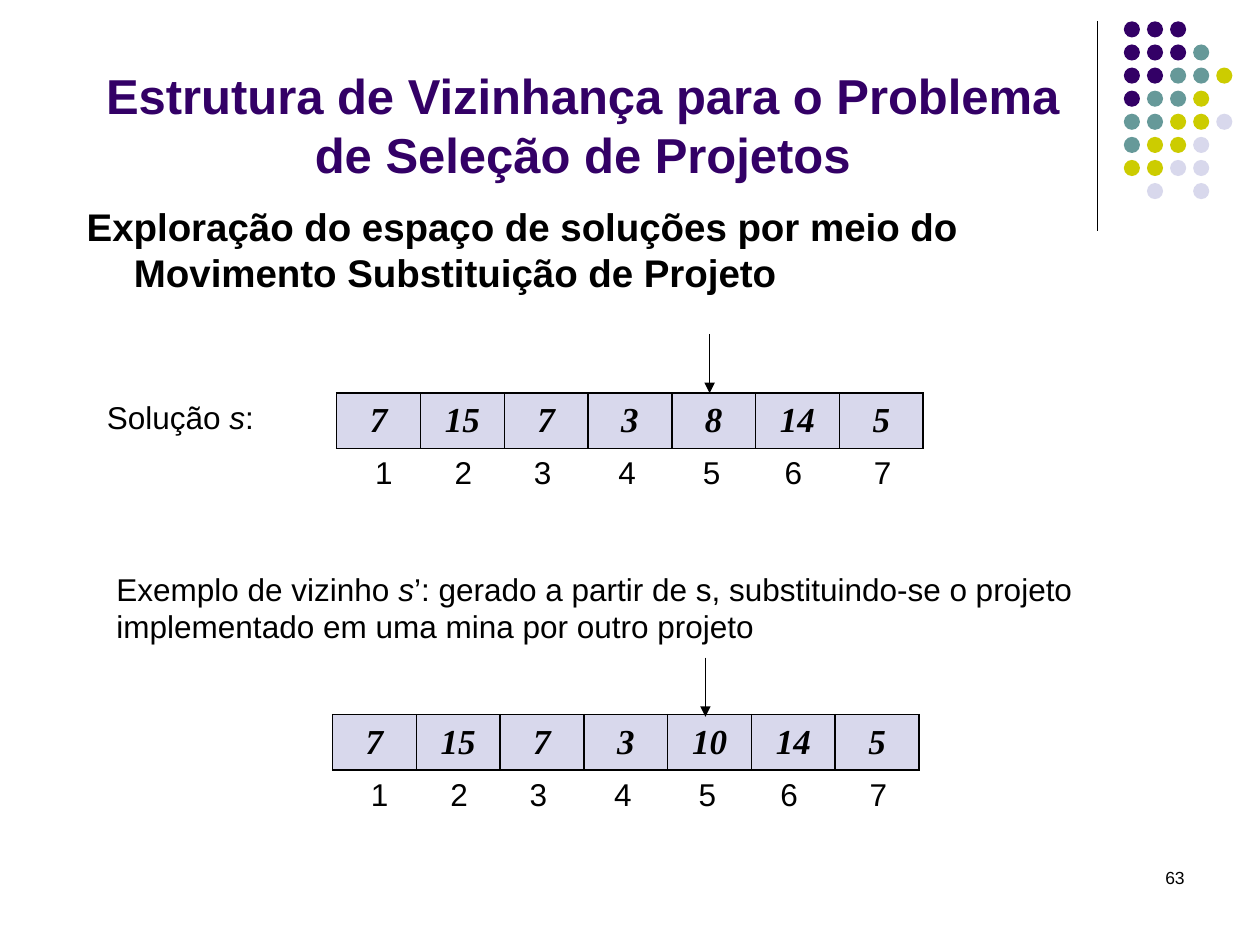
from lxml.etree import SubElement
from pptx import Presentation
from pptx.dml.color import RGBColor
from pptx.enum.shapes import MSO_CONNECTOR, MSO_SHAPE
from pptx.enum.text import MSO_ANCHOR, PP_ALIGN
from pptx.oxml.ns import qn
from pptx.util import Pt

COLORS = {"ink": "000000", "purple": "330066", "teal": "669999",
          "olive": "CCCC00", "lilac": "D8D8EC"}
DOT_COLORS = {"P": "purple", "T": "teal", "O": "olive", "L": "lilac"}
DOT_ROWS = ["PPP", "PPPT", "PPTTO", "PTTO", "TTOOL", "TOOL", "OOLL", " L L"]
INDEX_CENTERS = [27, 72.4, 117.7, 166, 214.2, 261, 312]


def rgb(name):
    return RGBColor.from_string(COLORS[name])


def add_run(p, text, size, color="ink", font="Arial", bold=False, italic=False):
    r = p.add_run()
    r.text = text
    r.font.name, r.font.size = font, Pt(size)
    r.font.bold, r.font.italic = bold, italic
    r.font.color.rgb = rgb(color)


def add_text(s, box, runs, size, align=PP_ALIGN.LEFT, bold=False):
    """Add a text box; runs are (text, italic) pairs."""
    tf = s.shapes.add_textbox(*map(Pt, box)).text_frame
    tf.word_wrap = True
    p = tf.paragraphs[0]
    p.alignment = align
    for text, italic in runs:
        add_run(p, text, size, bold=bold, italic=italic)
    return p


def add_line(s, x1, y1, x2, y2, arrow=False):
    line = s.shapes.add_connector(MSO_CONNECTOR.STRAIGHT, *map(Pt, (x1, y1, x2, y2)))
    line.line.color.rgb = rgb("ink")
    line.line.width = Pt(0.75)
    if arrow:
        SubElement(line.line._get_or_add_ln(), qn("a:tailEnd"), type="triangle")
    SubElement(line._element.spPr, qn("a:effectLst"))


def add_corner_dots(s, left, top, pitch=13.2, size=9.2):
    for row, codes in enumerate(DOT_ROWS):
        for col, code in enumerate(codes):
            if code == " ":
                continue
            sp = s.shapes.add_shape(MSO_SHAPE.OVAL, Pt(left + col * pitch),
                                    Pt(top + row * pitch), Pt(size), Pt(size))
            sp.shadow.inherit = False
            sp.fill.solid()
            sp.fill.fore_color.rgb = rgb(DOT_COLORS[code])
            sp.line.fill.background()


def add_title(s, box, text):
    title = s.shapes.title
    title.left, title.top, title.width, title.height = map(Pt, box)
    tf = title.text_frame
    tf.word_wrap = True
    tf.vertical_anchor = MSO_ANCHOR.TOP
    tf.margin_top = Pt(6)
    p = tf.paragraphs[0]
    p.alignment = PP_ALIGN.CENTER
    add_run(p, text, 28, "purple", bold=True)


def add_heading(s, box, text):
    p = add_text(s, box, [(text, False)], 22, bold=True)
    pPr = p._p.get_or_add_pPr()
    pPr.set("marL", str(Pt(27)))
    pPr.set("indent", str(-Pt(27)))


def set_borders(cell):
    tcPr = cell._tc.get_or_add_tcPr()
    for pos, side in enumerate(("lnL", "lnR", "lnT", "lnB")):
        ln = SubElement(tcPr, qn(f"a:{side}"), w=str(Pt(1)))
        fill = SubElement(ln, qn("a:solidFill"))
        SubElement(fill, qn("a:srgbClr"), val=COLORS["ink"])
        tcPr.insert(pos, ln)


def add_solution(s, box, projects, arrow_top):
    """Add the row of projects, the mine numbers below and the arrow to mine 5."""
    left, top, width, height = box
    table = s.shapes.add_table(1, len(projects), *map(Pt, box)).table
    table.first_row = table.horz_banding = False
    for col, project in zip(table.columns, projects):
        col.width = Pt(width / len(projects))
    for cell, project in zip(table.rows[0].cells, projects):
        cell.fill.solid()
        cell.fill.fore_color.rgb = rgb("lilac")
        cell.vertical_anchor = MSO_ANCHOR.MIDDLE
        set_borders(cell)
        p = cell.text_frame.paragraphs[0]
        p.alignment = PP_ALIGN.CENTER
        add_run(p, str(project), 20, font="Times New Roman", bold=True, italic=True)
    for mine, center in enumerate(INDEX_CENTERS, 1):
        add_text(s, (left + center - 14, top + 31, 28, 28.8),
                 [(str(mine), False)], 18, PP_ALIGN.CENTER)
    arrow_x = left + 213.1
    add_line(s, arrow_x, arrow_top, arrow_x, arrow_top + 33.8, arrow=True)


def main():
    prs = Presentation()
    prs.slide_width, prs.slide_height = Pt(720), Pt(540)
    s = prs.slides.add_slide(prs.slide_layouts[5])

    add_line(s, 627, 12, 627, 132)
    add_corner_dots(s, 642.2, 12.2)
    add_title(s, (36, 31.5, 594, 68.5),
              "Estrutura de Vizinhança para o Problema de Seleção de Projetos")
    add_heading(s, (42.5, 112.5, 584, 62.6),
                "Exploração do espaço de soluções por meio do "
                "Movimento Substituição de Projeto")
    add_text(s, (54, 224, 113, 28.8),
             [("Solução ", False), ("s", True), (":", False)], 18)
    add_solution(s, (192.4, 224.6, 335.3, 31.7), [7, 15, 7, 3, 8, 14, 5], 190.8)
    add_text(s, (59.5, 322, 618, 50.4),
             [("Exemplo de vizinho ", False), ("s", True),
              ("’: gerado a partir de s, substituindo-se o projeto "
               "implementado em uma mina por outro projeto", False)], 18)
    add_solution(s, (190, 408.4, 335.3, 31.7), [7, 15, 7, 3, 10, 14, 5], 375.8)
    add_text(s, (516, 492, 168, 36), [("63", False)], 10, PP_ALIGN.RIGHT)

    prs.save("out.pptx")


if __name__ == "__main__":
    main()
